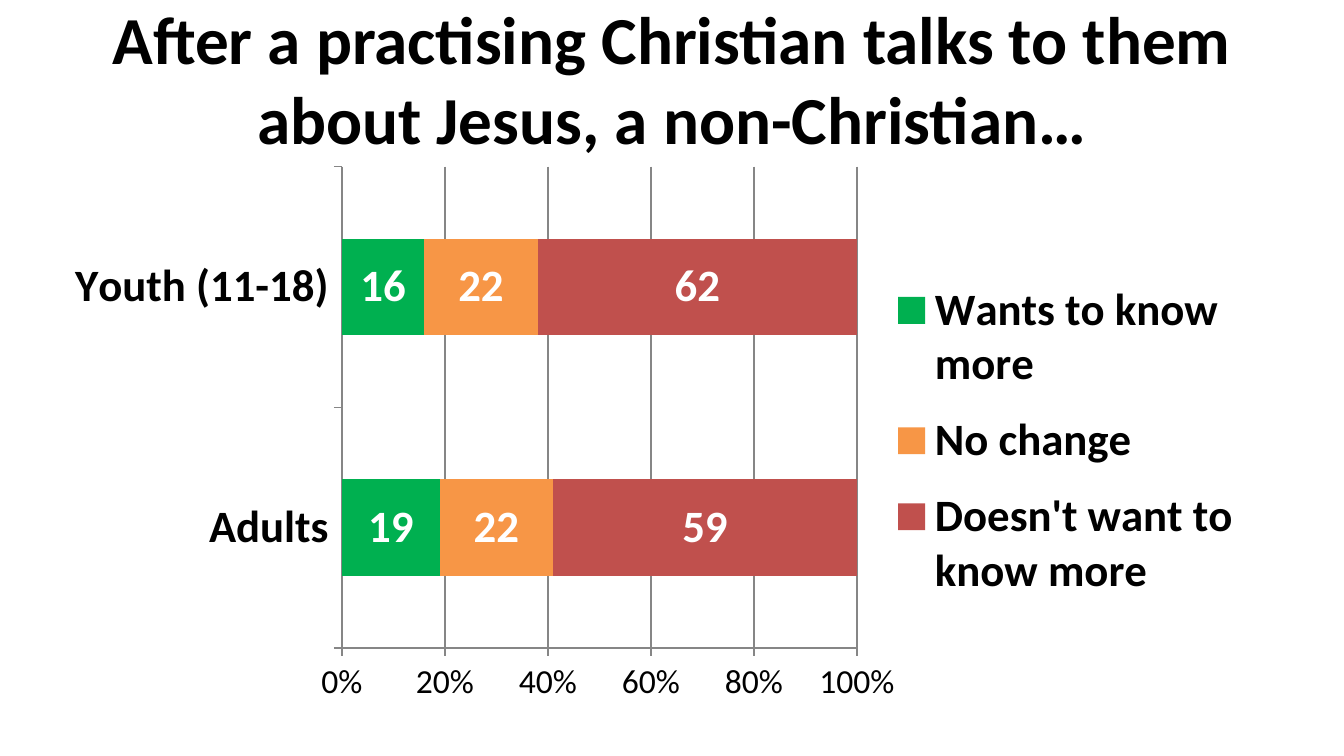
from pptx import Presentation
from pptx.chart.data import CategoryChartData as Data
from pptx.dml.color import RGBColor as RGB
from pptx.enum.chart import XL_CHART_TYPE as Kind
from pptx.enum.chart import XL_LEGEND_POSITION as Side
from pptx.enum.chart import XL_TICK_MARK as Tick
from pptx.enum.text import MSO_ANCHOR as Anchor
from pptx.enum.text import PP_ALIGN as Align
from pptx.oxml import parse_xml
from pptx.oxml.ns import nsdecls, qn
from pptx.util import Pt

SCALE = 9525  # EMU per px, 96 px to the inch
GROUPS = ["Adults", "Youth (11-18)"]
REPLIES = [
    ("Wants to know more", [19, 16], "00B050"),
    ("No change", [22, 22], "F79646"),
    ("Doesn't want to know more", [59, 62], "C0504D"),
]


def px(*sizes):
    return [size * SCALE for size in sizes]


def tint(code):
    return RGB.from_string(code)


def place(node, index, box, inner=False):
    """Give a chart part a fixed box, in fractions of the chart."""
    for old in node.findall(qn("c:layout")):
        node.remove(old)
    target = '<c:layoutTarget val="inner"/>' if inner else ""
    modes = "".join(f'<c:{key}Mode val="edge"/>' for key in "xy")
    sizes = "".join(f'<c:{key} val="{val}"/>' for key, val in zip("xywh", box))
    node.insert(index, parse_xml(
        f'<c:layout {nsdecls("c")}><c:manualLayout>{target}{modes}{sizes}'
        "</c:manualLayout></c:layout>"))


class Deck:
    face = "Calibri"
    ink = "000000"
    grid = "868686"

    def __init__(self, wide, high):
        self.show = Presentation()
        self.show.slide_width, self.show.slide_height = px(wide, high)
        self.slide = self.show.slides.add_slide(self.show.slide_layouts[5])

    def style(self, font, size, color=None, bold=True):
        font.name = self.face
        font.size = Pt(size)
        font.bold = bold
        font.color.rgb = tint(color or self.ink)

    def title(self, text, *box):
        head = self.slide.shapes.title
        head.left, head.top, head.width, head.height = px(*box)
        frame = head.text_frame
        frame.word_wrap = True
        frame.vertical_anchor = Anchor.MIDDLE
        line = frame.paragraphs[0]
        line.alignment = Align.CENTER
        run = line.add_run()
        run.text = text
        self.style(run.font, 36)

    def axis(self, axis, size, bold):
        axis.major_tick_mark = Tick.OUTSIDE
        axis.minor_tick_mark = Tick.NONE
        axis.format.line.color.rgb = tint(self.grid)
        self.style(axis.tick_labels.font, size, bold=bold)

    def bars(self, groups, rows, *box):
        data = Data(number_format="General")
        data.categories = groups
        for name, vals, _ in rows:
            data.add_series(name, vals)
        chart = self.slide.shapes.add_chart(
            Kind.BAR_STACKED_100, *px(*box), data).chart
        self.style(chart.font, 18, bold=False)
        chart.has_title = False

        plot = chart.plots[0]
        plot.gap_width, plot.overlap = 150, 100
        plot.vary_by_categories = False
        for part, (_, _, color) in zip(plot.series, rows):
            part.format.fill.solid()
            part.format.fill.fore_color.rgb = tint(color)
            part.data_labels.show_value = True
            self.style(part.data_labels.font, 24, "FFFFFF")

        self.axis(chart.category_axis, 24, True)
        scale = chart.value_axis
        self.axis(scale, 18, False)
        scale.minimum_scale, scale.maximum_scale = 0, 1
        scale.major_unit = 0.2
        scale.tick_labels.number_format = "0%"
        scale.tick_labels.number_format_is_linked = False
        scale.has_major_gridlines = True
        scale.major_gridlines.format.line.color.rgb = tint(self.grid)

        chart.has_legend = True
        key = chart.legend
        key.position = Side.RIGHT
        key.include_in_layout = False
        self.style(key.font, 24)
        area = chart.element.find(".//" + qn("c:plotArea"))
        place(area, 0, (0.24, 0.02, 0.42, 0.86), inner=True)
        place(chart.element.find(".//" + qn("c:legend")), 1,
              (0.69, 0.19, 0.28, 0.64))

    def save(self):
        self.show.save("out.pptx")


def main():
    deck = Deck(960, 540)
    deck.title("After a practising Christian talks to them about Jesus, "
               "a non-Christian…", 48, 0, 864, 111)
    deck.bars(GROUPS, REPLIES, 34, 111, 876, 400)
    deck.save()


if __name__ == "__main__":
    main()
